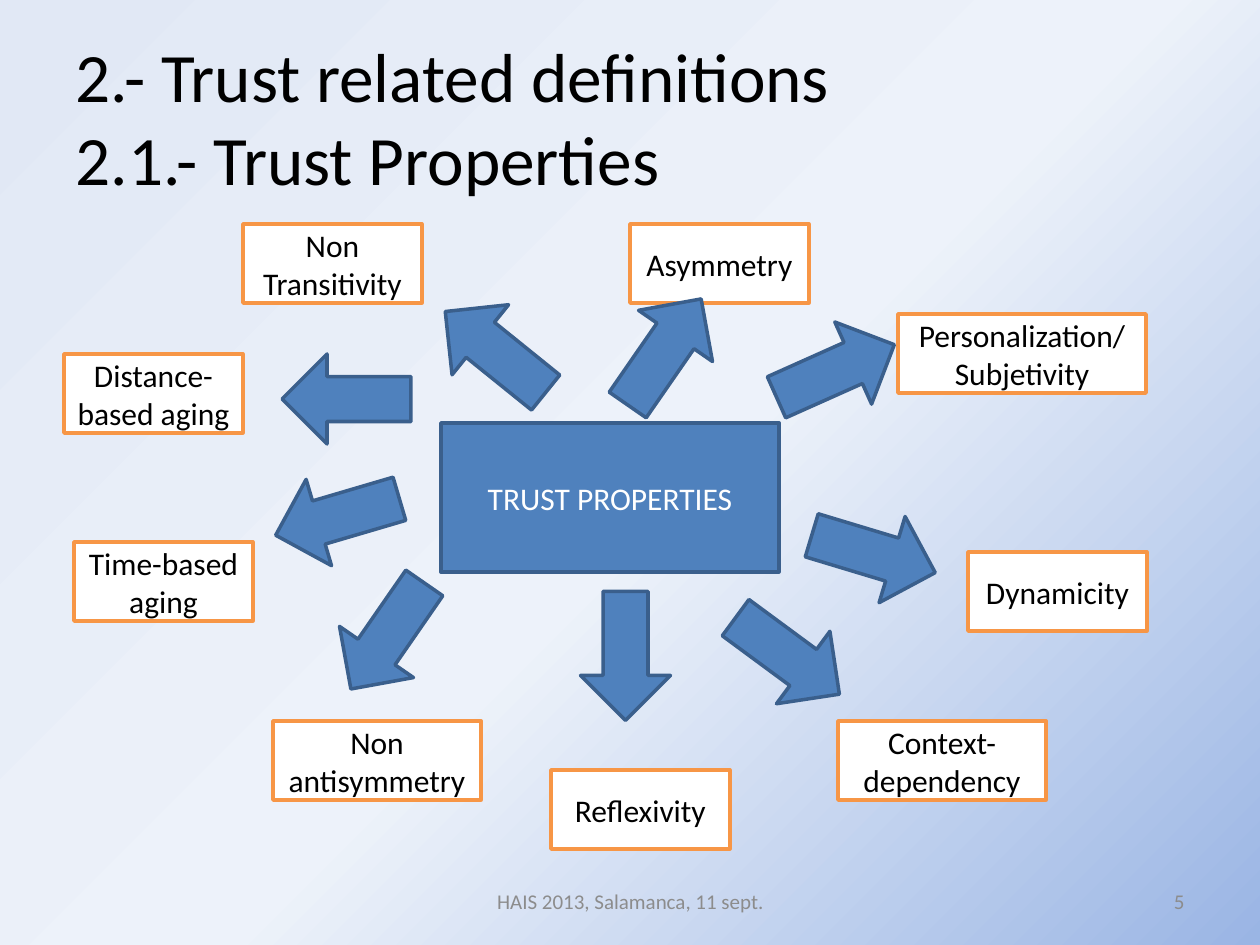
from pptx import Presentation
from pptx.dml.color import RGBColor
from pptx.enum.shapes import MSO_SHAPE
from pptx.enum.text import MSO_ANCHOR, MSO_AUTO_SIZE, PP_ALIGN
from pptx.oxml import parse_xml
from pptx.oxml.ns import nsdecls, qn
from pptx.util import Emu, Pt

RECTANGLE = MSO_SHAPE.RECTANGLE
RIGHT_ARROW = MSO_SHAPE.RIGHT_ARROW
LEFT, CENTER, RIGHT = PP_ALIGN.LEFT, PP_ALIGN.CENTER, PP_ALIGN.RIGHT
MIDDLE = MSO_ANCHOR.MIDDLE
NO_AUTOFIT = MSO_AUTO_SIZE.NONE

BLACK = RGBColor(0x00, 0x00, 0x00)
WHITE = RGBColor(0xFF, 0xFF, 0xFF)
BLUE = RGBColor(0x4F, 0x81, 0xBD)
DARK_BLUE = RGBColor(0x3A, 0x5F, 0x8C)
ORANGE = RGBColor(0xF7, 0x96, 0x46)
GRAY = RGBColor(0x8C, 0x8C, 0x8C)

FONT = "Calibri"
PX_PER_INCH = 126
BOX_HEIGHT = 79
ARROW_WIDTH, ARROW_HEIGHT = 129, 90

PROPERTIES = [
    ("Distance-based aging", 64, 354, 179),
    ("Reflexivity", 551, 770, 179),
    ("Asymmetry", 630, 224, 179),
    ("Dynamicity", 968, 552, 179),
    ("Time-based aging", 74, 542, 179),
    ("Non\nTransitivity", 243, 224, 179),
    ("Personalization/ Subjetivity", 898, 314, 248),
    ("Context-dependency", 838, 721, 208),
    ("Non antisymmetry", 273, 721, 208),
]

ARROWS = [
    (431, 307, 218.9),
    (600, 307, 304.7),
    (282, 354, 180),
    (273, 472, 163.6),
    (323, 591, 124.7),
    (561, 611, 90),
    (723, 611, 36.4),
    (809, 509, 16.8),
    (771, 326, 335.9),
]

BACKGROUND = f"""<a:gradFill {nsdecls("a")} rotWithShape="1">
  <a:gsLst>
    <a:gs pos="0"><a:srgbClr val="9AB5E4"/></a:gs>
    <a:gs pos="47000"><a:srgbClr val="EDF2FA"><a:alpha val="0"/></a:srgbClr></a:gs>
    <a:gs pos="100000"><a:srgbClr val="E1E8F5"/></a:gs>
  </a:gsLst>
  <a:path path="circle"><a:fillToRect l="100000" t="100000"/></a:path>
  <a:tileRect r="-100000" b="-100000"/>
</a:gradFill>"""


def px(length):
    return Emu(round(length * 914400 / PX_PER_INCH))


def set_background(slide):
    slide.background.fill.solid()
    solid_fill = slide.element.find(".//" + qn("p:bgPr")).find(qn("a:solidFill"))
    solid_fill.getparent().replace(solid_fill, parse_xml(BACKGROUND))


def set_text(shape, text, size, color, alignment):
    frame = shape.text_frame
    frame.text = text
    frame.word_wrap = True
    frame.auto_size = NO_AUTOFIT
    frame.vertical_anchor = MIDDLE
    for paragraph in frame.paragraphs:
        paragraph.alignment = alignment
        paragraph.font.name = FONT
        paragraph.font.size = Pt(size)
        paragraph.font.color.rgb = color


def set_title(slide, text):
    title = slide.shapes.title
    title.left, title.top, title.width, title.height = map(px, (63, 38, 1134, 157))
    set_text(title, text, 39.6, BLACK, LEFT)


def add_filled_shape(slide, kind, bounds, fill, line):
    shape = slide.shapes.add_shape(kind, *map(px, bounds))
    shape.shadow.inherit = False
    shape.fill.solid()
    shape.fill.fore_color.rgb = fill
    shape.line.color.rgb = line
    shape.line.width = Pt(2)
    return shape


def add_box(slide, text, bounds, fill, line, color):
    box = add_filled_shape(slide, RECTANGLE, bounds, fill, line)
    set_text(box, text, 18, color, CENTER)


def add_arrow(slide, left, top, rotation):
    bounds = (left, top, ARROW_WIDTH, ARROW_HEIGHT)
    arrow = add_filled_shape(slide, RIGHT_ARROW, bounds, BLUE, DARK_BLUE)
    arrow.rotation = rotation


def add_footer(slide, text, bounds, alignment):
    footer = slide.shapes.add_textbox(*map(px, bounds))
    set_text(footer, text, 12, GRAY, alignment)


def main():
    presentation = Presentation()
    presentation.slide_width = px(1260)
    presentation.slide_height = px(945)
    slide = presentation.slides.add_slide(presentation.slide_layouts[5])
    set_background(slide)
    set_title(slide, "2.- Trust related definitions\v2.1.- Trust Properties")
    add_box(slide, "TRUST PROPERTIES", (441, 423, 338, 149), BLUE, DARK_BLUE, WHITE)
    for text, left, top, width in PROPERTIES:
        add_box(slide, text, (left, top, width, BOX_HEIGHT), WHITE, ORANGE, BLACK)
    for left, top, rotation in ARROWS:
        add_arrow(slide, left, top, rotation)
    add_footer(slide, "5", (903, 876, 294, 50), RIGHT)
    add_footer(slide, "HAIS 2013, Salamanca, 11 sept.", (431, 876, 399, 50), CENTER)
    presentation.save("out.pptx")


if __name__ == "__main__":
    main()
